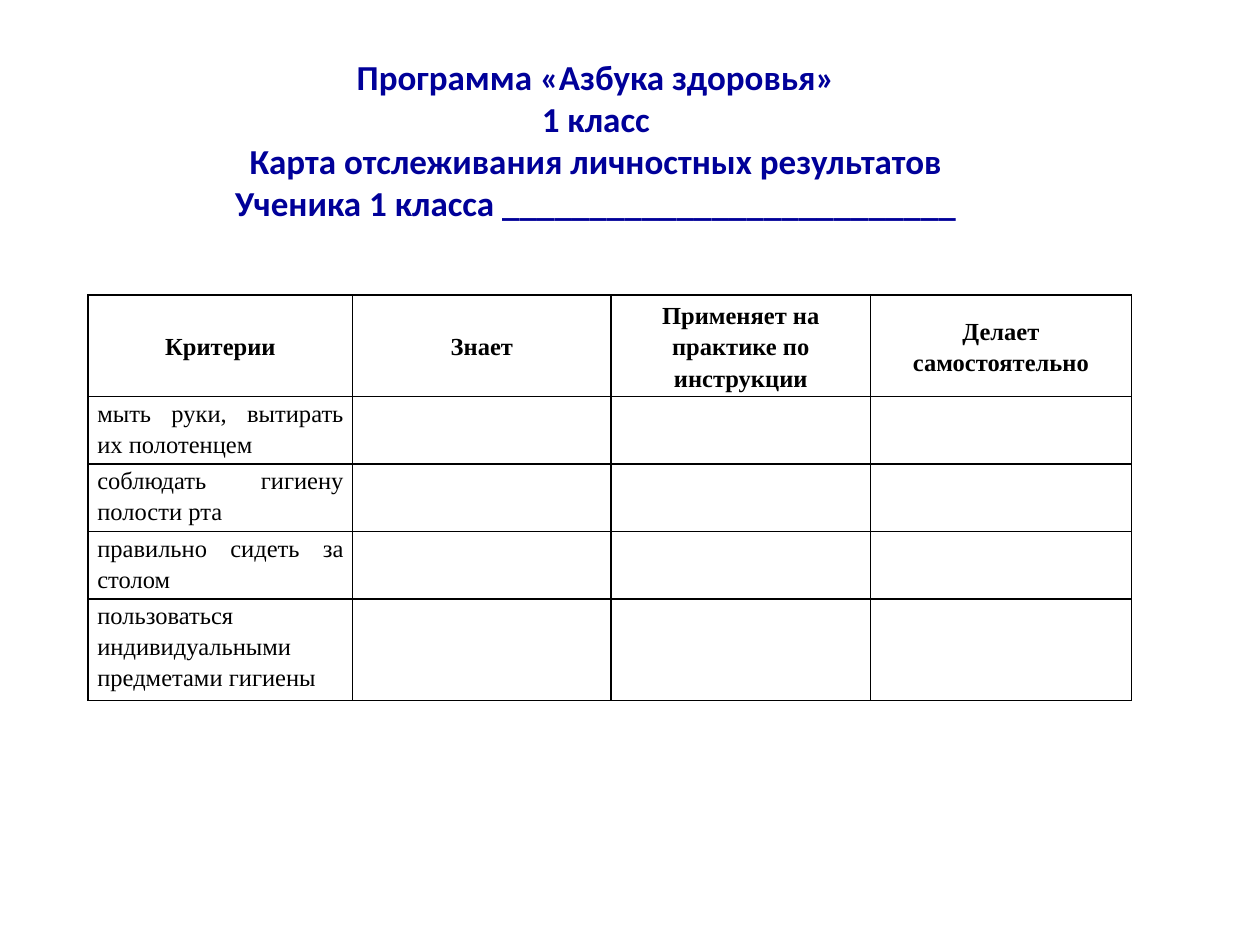
from lxml import etree
from pptx import Presentation
from pptx.dml.color import RGBColor
from pptx.enum.text import MSO_ANCHOR, MSO_AUTO_SIZE, PP_ALIGN
from pptx.oxml.ns import qn
from pptx.util import Pt

CENTER, JUSTIFY = PP_ALIGN.CENTER, PP_ALIGN.JUSTIFY
TOP, MIDDLE = MSO_ANCHOR.TOP, MSO_ANCHOR.MIDDLE
NO_AUTOFIT = MSO_AUTO_SIZE.NONE
TITLE_ONLY = 5

HEADING = ["Программа «Азбука здоровья»", "1 класс",
           "Карта отслеживания личностных результатов",
           "Ученика 1 класса " + "_" * 26]
LEVELS = ["Критерии", "Знает", "Применяет на практике по инструкции",
          "Делает самостоятельно"]
CRITERIA = ["мыть руки, вытирать их полотенцем", "соблюдать гигиену полости рта",
            "правильно сидеть за столом",
            "пользоваться индивидуальными предметами гигиены"]
COLUMN_WIDTHS = [151.2, 147.6, 148.3, 149]
ROW_HEIGHTS = [58, 38.6, 38.6, 38.6, 58]


def color(hex_value):
    return RGBColor.from_string(hex_value)


def apply(target, values):
    for name, value in values.items():
        setattr(target, name, value)


class ResultsCard:
    heading_font = {"name": "Calibri", "size": Pt(20), "bold": True}
    table_font = {"name": "Times New Roman", "size": Pt(14)}
    cell_format = {"margin_left": Pt(5.2), "margin_right": Pt(5.2),
                   "margin_top": 0, "margin_bottom": 0}
    heading_color, ink = "000099", "000000"

    def __init__(self, slide):
        self.slide = slide

    def paragraph(self, paragraph, text, font, hex_value, layout):
        paragraph.text = text
        apply(paragraph, layout)
        apply(paragraph.font, font)
        paragraph.font.color.rgb = color(hex_value)

    def heading(self, lines, left, top, width, height):
        title = self.slide.shapes.title
        apply(title, {"left": Pt(left), "top": Pt(top),
                      "width": Pt(width), "height": Pt(height)})
        frame = title.text_frame
        apply(frame, {"word_wrap": True, "auto_size": NO_AUTOFIT,
                      "vertical_anchor": TOP})
        for index, line in enumerate(lines):
            paragraph = frame.add_paragraph() if index else frame.paragraphs[0]
            self.paragraph(paragraph, line, self.heading_font,
                           self.heading_color, {"alignment": CENTER})

    def borders(self, cell):
        properties = cell._tc.get_or_add_tcPr()
        for position, side in enumerate(("a:lnL", "a:lnR", "a:lnT", "a:lnB")):
            line = etree.Element(qn(side), w=str(Pt(1)))
            fill = etree.SubElement(line, qn("a:solidFill"))
            etree.SubElement(fill, qn("a:srgbClr"), val=self.ink)
            properties.insert(position, line)

    def table(self, rows, left, top, widths, heights):
        table = self.slide.shapes.add_table(
            len(rows), len(widths), Pt(left), Pt(top),
            Pt(sum(widths)), Pt(sum(heights))).table
        apply(table, {"first_row": False, "horz_banding": False})
        for column, width in zip(table.columns, widths):
            column.width = Pt(width)
        for r, (texts, height) in enumerate(zip(rows, heights)):
            table.rows[r].height = Pt(height)
            is_header = r == 0
            for c, text in enumerate(texts):
                cell = table.cell(r, c)
                apply(cell, self.cell_format)
                cell.vertical_anchor = MIDDLE if is_header else TOP
                cell.fill.background()
                self.borders(cell)
                self.paragraph(
                    cell.text_frame.paragraphs[0], text,
                    {**self.table_font, "bold": is_header}, self.ink,
                    {"alignment": CENTER if is_header else JUSTIFY,
                     "line_spacing": 1.15})


def main():
    deck = Presentation()
    deck.slide_width, deck.slide_height = Pt(720), Pt(540)
    card = ResultsCard(deck.slides.add_slide(deck.slide_layouts[TITLE_ONLY]))

    # Programme, class and pupil
    card.heading(HEADING, 123.8, 28.1, 433.4, 126)

    # Criteria against levels, left blank for filling in
    blanks = [""] * (len(LEVELS) - 1)
    rows = [LEVELS] + [[criterion] + blanks for criterion in CRITERIA]
    card.table(rows, 50.4, 168.5, COLUMN_WIDTHS, ROW_HEIGHTS)

    deck.save("out.pptx")


if __name__ == "__main__":
    main()
